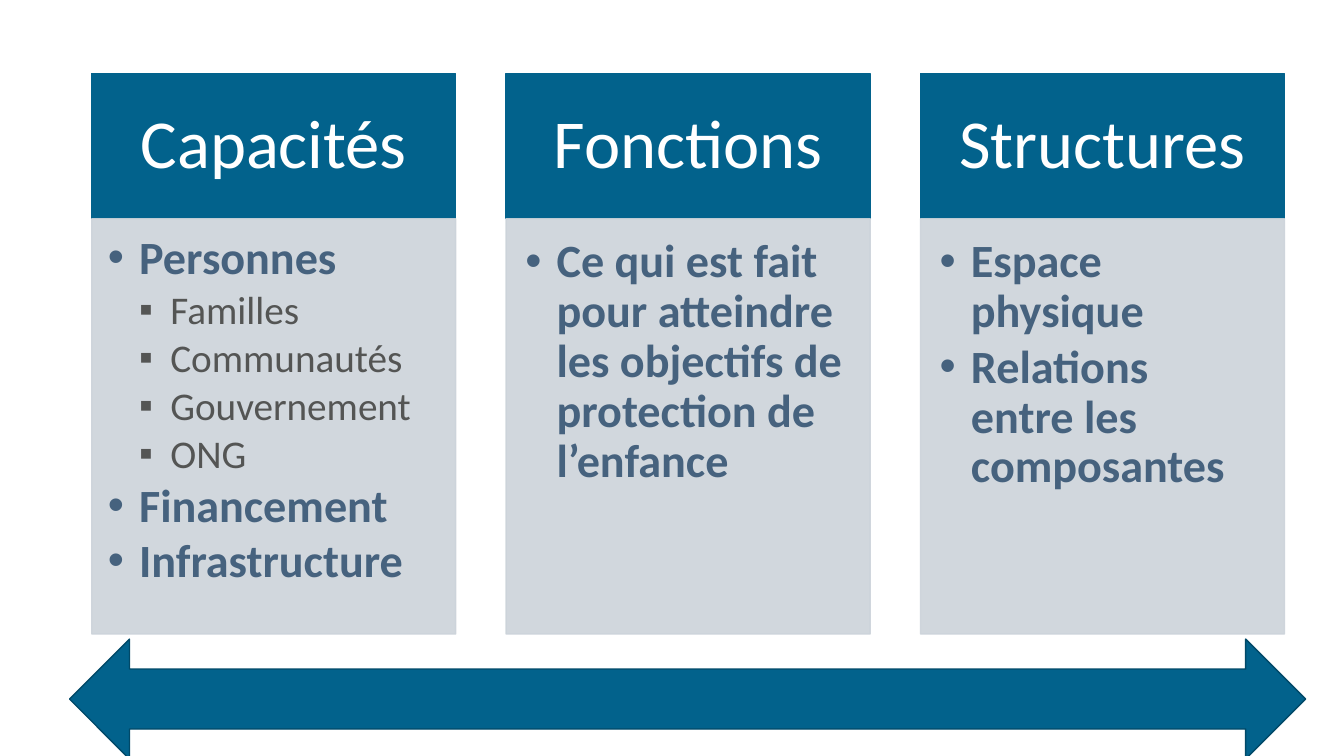
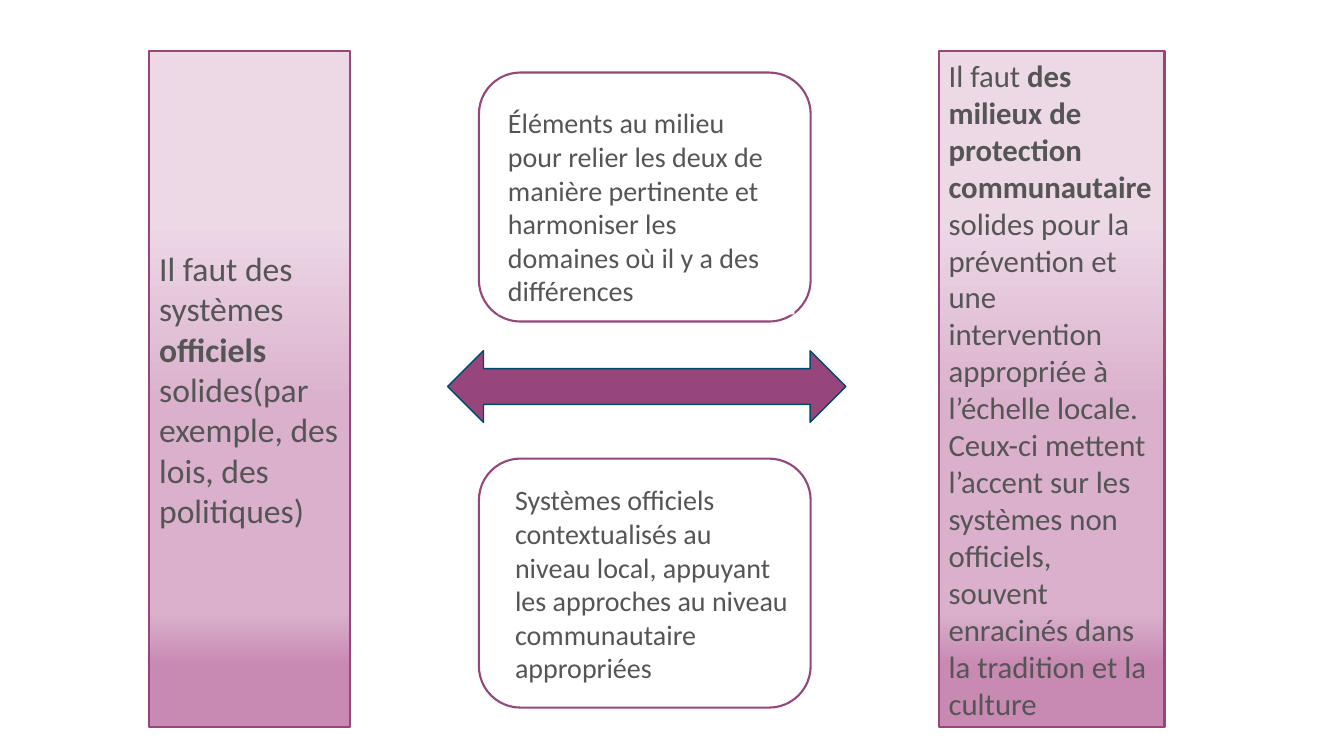
from lxml import etree
from pptx import Presentation
from pptx.dml.color import RGBColor
from pptx.enum import shapes, text
from pptx.oxml import ns
from pptx.util import Inches, Pt

FONT = "Calibri"
WHITE = RGBColor(0xFF, 0xFF, 0xFF)
BLUE = RGBColor(0x02, 0x62, 0x8C)
NAVY = RGBColor(0x01, 0x49, 0x68)
SLATE = RGBColor(0x46, 0x62, 0x7E)
GREY = RGBColor(0x54, 0x55, 0x54)
PALE = RGBColor(0xCC, 0xD3, 0xDA)
PLUM = RGBColor(0x97, 0x46, 0x7C)
PINK = RGBColor(0xED, 0xD8, 0xE6)
ROSE = RGBColor(0xDA, 0xB0, 0xCC)
MAUVE = RGBColor(0xC8, 0x89, 0xB3)
FADE = [(0, PINK), (25, PINK), (53, ROSE), (83, ROSE), (91, MAUVE), (100, MAUVE)]

KIND = shapes.MSO_SHAPE
MID = text.MSO_ANCHOR.MIDDLE
TOP = text.MSO_ANCHOR.TOP
LEFT = text.PP_ALIGN.LEFT
MARGIN = (0.1, 0.05, 0.1, 0.05)
STEP = 0.31  # indent of one list level

# Heading, insets of the list, and its items as (level, words)
CARDS = [
    ("Capacités", (0.16, 0.16, 0.22, 0.24), [
        (1, "Personnes"), (2, "Familles"), (2, "Communautés"),
        (2, "Gouvernement"), (2, "ONG"), (1, "Financement"),
        (1, "Infrastructure")]),
    ("Fonctions", (0.19, 0.19, 0.26, 0.29), [
        (1, "Ce qui est fait pour atteindre les objectifs "
            "de protection de l’enfance")]),
    ("Structures", (0.19, 0.19, 0.26, 0.29), [
        (1, "Espace physique"), (1, "Relations entre les composantes")]),
]


def sub(parent, tag, **attrs):
    node = etree.SubElement(parent, ns.qn(tag))
    for name, value in attrs.items():
        node.set(name, str(value))
    return node


def box(slide, kind, place, fill=None, line=None, width=1):
    shape = slide.shapes.add_shape(kind, *map(Inches, place))
    shape.shadow.inherit = False
    if fill is None:
        shape.fill.background()
    else:
        shape.fill.solid()
        shape.fill.fore_color.rgb = fill
    if line is None:
        shape.line.fill.background()
    else:
        shape.line.color.rgb = line
        shape.line.width = Pt(width)
    return shape


def frame(shape, anchor=TOP, insets=MARGIN):
    area = shape.text_frame
    area.word_wrap = True
    area.vertical_anchor = anchor
    (area.margin_left, area.margin_top,
     area.margin_right, area.margin_bottom) = map(Inches, insets)
    return area


def write(para, *parts, size=20, color=GREY, bold=False, align=LEFT, lead=None):
    """Add runs to a paragraph; a part given as (words,) turns bold."""
    para.alignment = align
    para.line_spacing = lead
    for part in parts:
        strong = isinstance(part, tuple)
        run = para.add_run()
        run.text = part[0] if strong else part
        run.font.name = FONT
        run.font.size = Pt(size)
        run.font.color.rgb = color
        run.font.bold = bold or strong


def bullet(para, level):
    para.space_after = Pt(4)
    props = para._p.get_or_add_pPr()
    props.set("marL", str(Inches(STEP * level)))
    props.set("indent", str(-Inches(STEP)))
    sub(props, "a:buFont", typeface="Arial")
    sub(props, "a:buChar", char="•▪"[level - 1])


def sheer(shape, percent):
    """Set the opacity of a shape's fill and line."""
    for color in shape._element.spPr.iter(ns.qn("a:srgbClr")):
        sub(color, "a:alpha", val=percent * 1000)


def fade(shape):
    """Fill a shape with the shared gradient, from top to bottom."""
    shape.fill.gradient()
    grad = shape._element.spPr.find(ns.qn("a:gradFill"))
    for child in list(grad):
        grad.remove(child)
    stops = sub(grad, "a:gsLst")
    for spot, color in FADE:
        stop = sub(stops, "a:gs", pos=spot * 1000)
        sub(stop, "a:srgbClr", val=color)
    sub(grad, "a:lin", ang=5400000, scaled=0)


def card(slide, left, title, insets, items):
    wide, split = 3.61, 2.17
    head = box(slide, KIND.RECTANGLE, (left, 0.73, wide, 1.44), BLUE, BLUE)
    area = frame(head, MID, (0.2, 0.22, 0.2, 0.22))
    write(area.paragraphs[0], title, size=49, color=WHITE,
          align=text.PP_ALIGN.CENTER, lead=0.9)
    body = box(slide, KIND.RECTANGLE, (left, split, wide, 4.12), PALE, PALE)
    sheer(body, 90)
    area = frame(body, TOP, insets)
    for i, (level, words) in enumerate(items):
        para = area.add_paragraph() if i else area.paragraphs[0]
        main_item = level == 1
        write(para, words, size=33 if main_item else 28,
              color=SLATE if main_item else GREY, bold=main_item, lead=0.9)
        bullet(para, level)


def pillar(slide, left, wide, size, *parts):
    shape = box(slide, KIND.RECTANGLE, (left, 0.51, wide, 6.7), PINK, PLUM, 1.5)
    fade(shape)
    write(frame(shape, MID).paragraphs[0], *parts, size=size)


def note(slide, left, top, words, fill=None):
    shape = box(slide, KIND.RECTANGLE, (left, top, 2.94, 2.12), fill)
    write(frame(shape).paragraphs[0], words)


def parts_slide(slide):
    for i, (title, insets, items) in enumerate(CARDS):
        card(slide, 0.91 + 4.11 * i, title, insets, items)
    box(slide, KIND.LEFT_RIGHT_ARROW, (0.69, 6.34, 12.26, 1.19), BLUE, NAVY)


def links_slide(slide):
    pillar(slide, 1.48, 1.99, 24, "Il faut des systèmes ", ("officiels",),
           " solides(par exemple, des lois, des politiques)")
    pillar(slide, 9.31, 2.24, 22, "Il faut ",
           ("des milieux de protection communautaire ",),
           "solides pour la prévention et une intervention appropriée à "
           "l’échelle locale. Ceux-ci mettent l’accent sur les systèmes non "
           "officiels, souvent enracinés dans la tradition et la culture")
    box(slide, KIND.LEFT_RIGHT_ARROW, (4.44, 3.48, 3.95, 0.71), PLUM, NAVY)
    for top in (0.72, 4.55):
        box(slide, KIND.ROUNDED_RECTANGLE, (4.75, top, 3.29, 2.47),
            WHITE, PLUM, 1.5)
    note(slide, 5.01, 4.74,
         "Systèmes officiels contextualisés au niveau local, appuyant les "
         "approches au niveau communautaire appropriées")
    note(slide, 4.94, 1,
         "Éléments au milieu pour relier les deux de manière pertinente et "
         "harmoniser les domaines où il y a des différences", WHITE)


def main():
    deck = Presentation()
    deck.slide_width, deck.slide_height = Inches(13.33), Inches(7.5)
    for build in (parts_slide, links_slide):
        build(deck.slides.add_slide(deck.slide_layouts[6]))
    deck.save("out.pptx")


if __name__ == "__main__":
    main()
